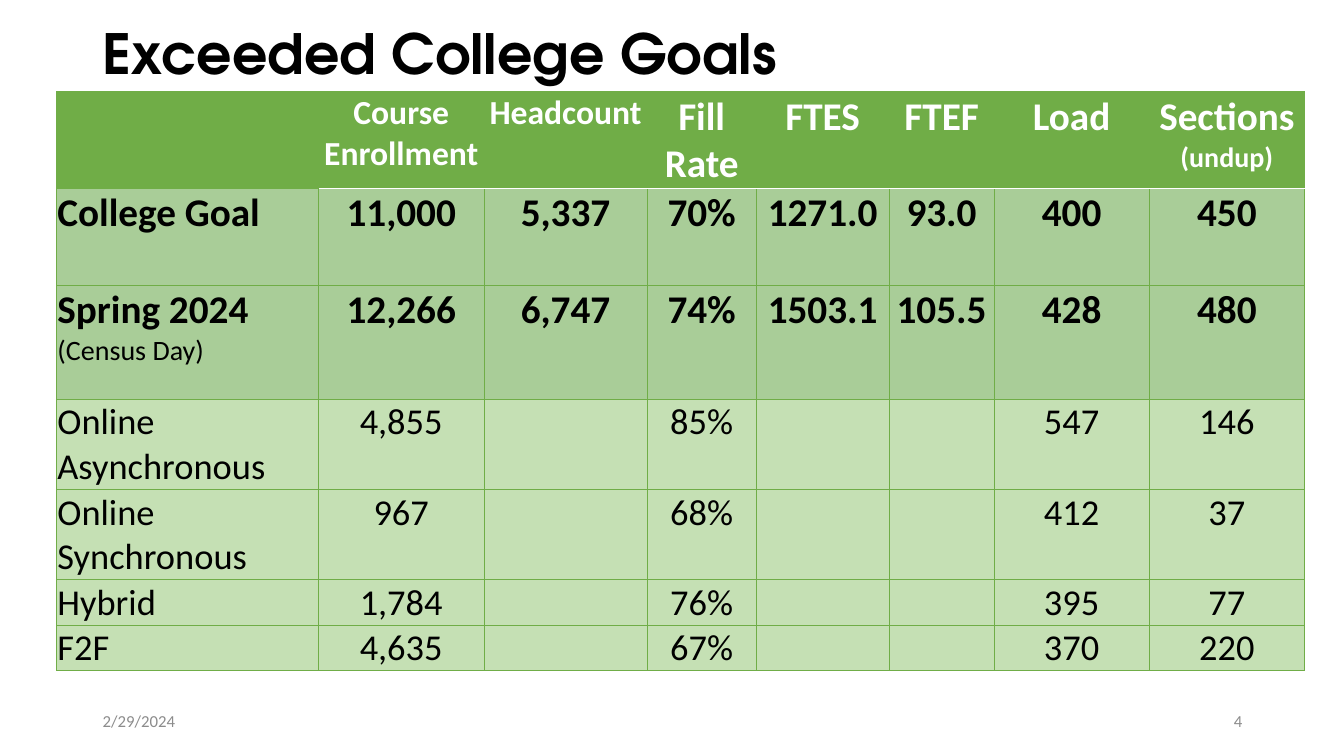
from lxml import etree
from pptx import Presentation
from pptx.dml.color import RGBColor
from pptx.enum import text as t
from pptx.oxml import ns
from pptx.util import Inches, Pt

BLACK = RGBColor(0x00, 0x00, 0x00)
WHITE = RGBColor(0xFF, 0xFF, 0xFF)
GREY = RGBColor(0x8C, 0x8C, 0x8C)
GREEN = RGBColor(0x70, 0xAD, 0x47)
MID_GREEN = RGBColor(0xA9, 0xCD, 0x98)
PALE_GREEN = RGBColor(0xC5, 0xE0, 0xB4)

LEFT, CENTER, RIGHT = t.PP_ALIGN.LEFT, t.PP_ALIGN.CENTER, t.PP_ALIGN.RIGHT

COLUMN_WIDTHS = [2.6, 1.64, 1.62, 1.08, 1.32, 1.04, 1.54, 1.54]
ROW_HEIGHTS = [0.95, 0.96, 1.13, 0.89, 0.89, 0.45, 0.45]
SUMMARY_ROWS = 2

# A cell is a list of paragraphs; a paragraph is a list of (words, size) spans.
HEADER = [
    [],
    [[("Course Enrollment", 24)]],
    [[("Headcount", 24)]],
    [[("Fill Rate", 28)]],
    [[("FTES", 28)]],
    [[("FTEF", 28)]],
    [[("Load", 28)]],
    [[("Sections ", 28), ("(undup)", 20)]],
]
RESULTS = [
    ["College Goal", "11,000", "5,337", "70%", "1271.0", "93.0", "400", "450"],
    ["Spring 2024", "12,266", "6,747", "74%", "1503.1", "105.5", "428", "480"],
    ["Online Asynchronous", "4,855", "", "85%", "", "", "547", "146"],
    ["Online Synchronous", "967", "", "68%", "", "", "412", "37"],
    ["Hybrid", "1,784", "", "76%", "", "", "395", "77"],
    ["F2F", "4,635", "", "67%", "", "", "370", "220"],
]


def add_span(para, words, size=12, color=BLACK, bold=False, font="Calibri"):
    span = para.add_run()
    span.text = words
    span.font.size = Pt(size)
    span.font.name = font
    span.font.bold = bold
    span.font.color.rgb = color


def set_border(cell, side, color, width):
    """Draw one edge of a cell; side is L, R, T or B, in that order."""
    line = etree.SubElement(cell._tc.get_or_add_tcPr(), ns.qn(f"a:ln{side}"), w=str(Pt(width)))
    fill = etree.SubElement(line, ns.qn("a:solidFill"))
    etree.SubElement(fill, ns.qn("a:srgbClr"), val=str(color))


class GoalsPage:
    """The slide in hand and the look of its elements."""

    def __init__(self, deck):
        self.page = deck.slides.add_slide(deck.slide_layouts[5])

    def title(self, words):
        box = self.page.shapes.title
        box.left, box.top = Inches(0.92), Inches(0.22)
        box.width, box.height = Inches(11.5), Inches(0.68)
        frame = box.text_frame
        frame.auto_size = t.MSO_AUTO_SIZE.NONE
        frame.vertical_anchor = t.MSO_ANCHOR.MIDDLE
        para = frame.paragraphs[0]
        para.alignment = LEFT
        para.line_spacing = 0.9
        add_span(para, words, size=39.6, bold=True, font="TeX Gyre Adventor")

    def footer(self, words, left, align):
        box = self.page.shapes.add_textbox(Inches(left), Inches(6.95), Inches(3), Inches(0.4))
        frame = box.text_frame
        frame.word_wrap = True
        frame.vertical_anchor = t.MSO_ANCHOR.MIDDLE
        frame.paragraphs[0].alignment = align
        add_span(frame.paragraphs[0], words, color=GREY)

    def table(self):
        rows, columns = len(ROW_HEIGHTS), len(COLUMN_WIDTHS)
        grid = self.page.shapes.add_table(
            rows, columns, Inches(0.56), Inches(0.91),
            Inches(sum(COLUMN_WIDTHS)), Inches(sum(ROW_HEIGHTS))).table
        for column, width in zip(grid.columns, COLUMN_WIDTHS):
            column.width = Inches(width)
        for row, height in zip(grid.rows, ROW_HEIGHTS):
            row.height = Inches(height)

        for c, paragraphs in enumerate(HEADER):
            self.cell(grid, 0, c, paragraphs, GREEN, WHITE, True)
        for r, values in enumerate(RESULTS, start=1):
            summary = r <= SUMMARY_ROWS
            fill, size = (MID_GREEN, 28) if summary else (PALE_GREEN, 26)
            for c, value in enumerate(values):
                paragraphs = [[(value, size)]] if value else []
                if value == "Spring 2024":
                    paragraphs.append([("(Census Day)", 20)])
                self.cell(grid, r, c, paragraphs, fill, BLACK, summary)

    def cell(self, grid, r, c, paragraphs, fill, color, bold):
        cell = grid.cell(r, c)
        cell.margin_left = cell.margin_right = cell.margin_top = Inches(0.01)
        cell.margin_bottom = 0
        frame = cell.text_frame
        for i, spans in enumerate(paragraphs):
            para = frame.add_paragraph() if i else frame.paragraphs[0]
            para.alignment = CENTER if c else LEFT
            for words, size in spans:
                add_span(para, words, size=size, color=color, bold=bold and i == 0)

        thin, under_header = (GREEN, 0.5), (WHITE, 1) if c else (GREEN, 0.5)
        label_edge = (GREEN, 1) if r else thin
        set_border(cell, "L", *(label_edge if c == 1 else thin))
        set_border(cell, "R", *(label_edge if c == 0 else thin))
        set_border(cell, "T", *(under_header if r == 1 else thin))
        set_border(cell, "B", *(under_header if r == 0 else thin))
        cell.fill.solid()
        cell.fill.fore_color.rgb = fill


def main():
    deck = Presentation()
    deck.slide_width, deck.slide_height = Inches(13.33), Inches(7.5)
    goals = GoalsPage(deck)
    goals.title("Exceeded College Goals")
    goals.table()
    goals.footer("2/29/2024", 0.92, LEFT)
    goals.footer("4", 9.42, RIGHT)
    deck.save("out.pptx")


if __name__ == "__main__":
    main()
